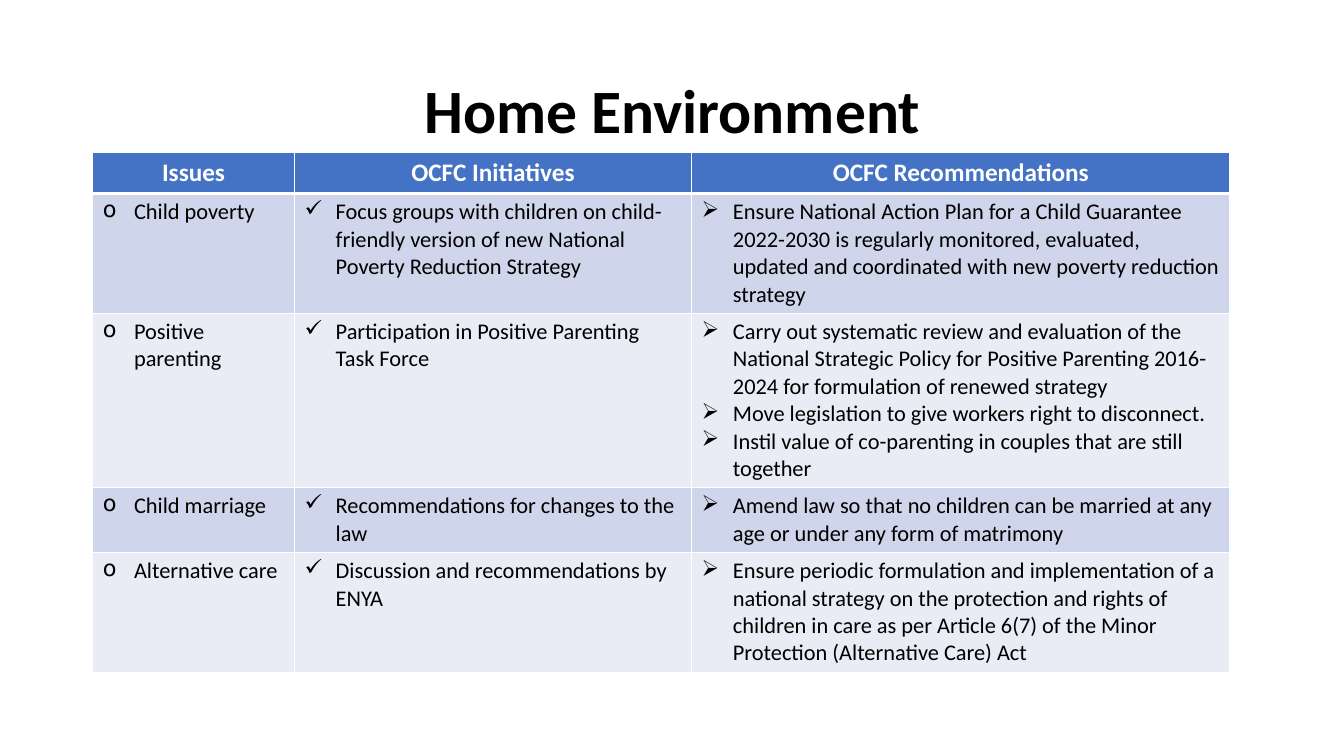
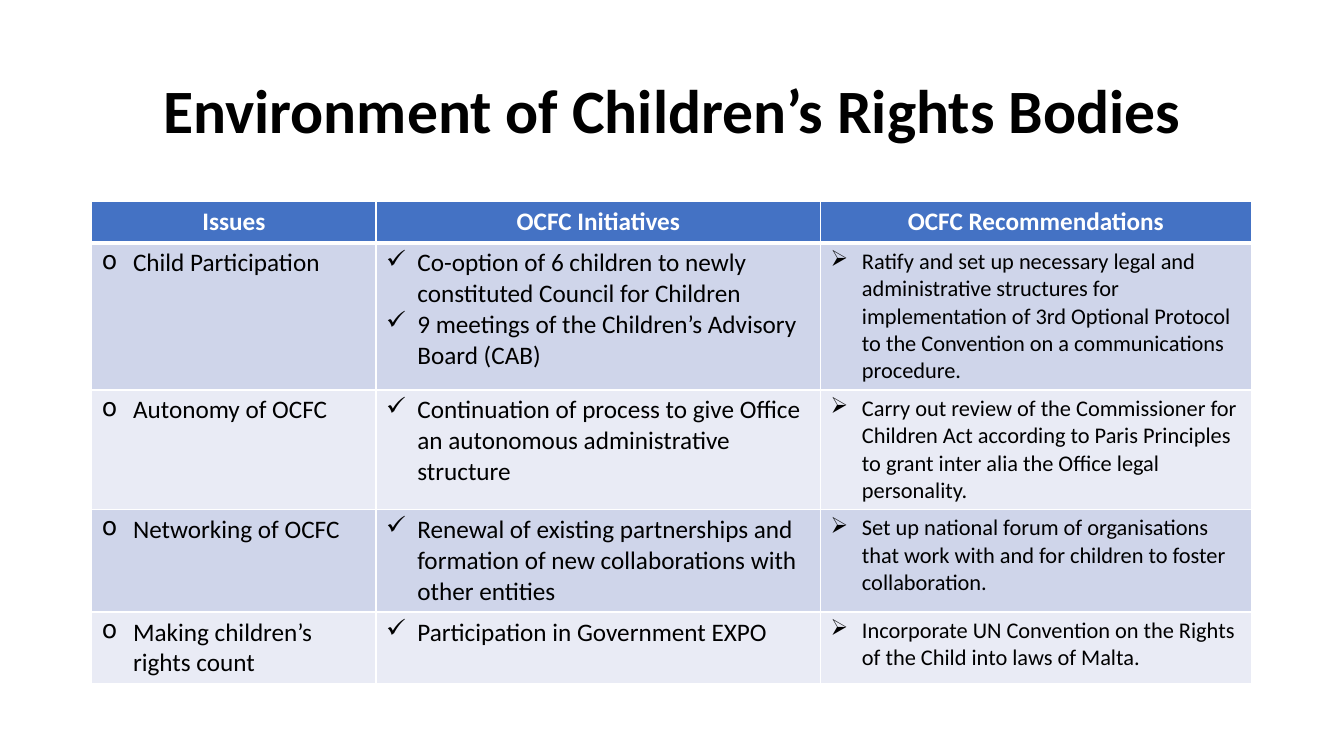
from lxml import etree
from pptx import Presentation, util as u
from pptx.dml.color import RGBColor
from pptx.enum import text
from pptx.oxml.ns import qn

# Shared look
FONT = "Calibri"
BLACK, WHITE = "000000", "FFFFFF"
HEADER_FILL = "4472C4"
BAND_FILLS = ("CFD5EA", "E9EBF5")
TITLE_BOX = (0.92, 0.4, 11.5, 1.45)
HEADINGS = ("Issues", "OCFC Initiatives", "OCFC Recommendations")
BULLETS = ("o", "✓", "➢")
HANG = u.Inches(0.31)
THIN, THICK = 1, 3
HEADER_HEIGHT = 0.41

# Each row: height, then the paragraphs of its three cells
HOME_ROWS = [
    (1.18, ["Child poverty"],
     ["Focus groups with children on child-friendly version of new National "
      "Poverty Reduction Strategy"],
     ["Ensure National Action Plan for a Child Guarantee 2022-2030 is regularly "
      "monitored, evaluated, updated and coordinated with new poverty reduction "
      "strategy"]),
    (1.72, ["Positive parenting"],
     ["Participation in Positive Parenting Task Force"],
     ["Carry out systematic review and evaluation of the National Strategic Policy "
      "for Positive Parenting 2016-2024 for formulation of renewed strategy",
      "Move legislation to give workers right to disconnect.",
      "Instil value of co-parenting in couples that are still together"]),
    (0.64, ["Child marriage"],
     ["Recommendations for changes to the law"],
     ["Amend law so that no children can be married at any age or under any form "
      "of matrimony"]),
    (1.18, ["Alternative care"],
     ["Discussion and recommendations by ENYA"],
     ["Ensure periodic formulation and implementation of a national strategy on the "
      "protection and rights of children in care as per Article 6(7) of the Minor "
      "Protection (Alternative Care) Act"]),
]
RIGHTS_ROWS = [
    (1.45, ["Child Participation"],
     ["Co-option of 6 children to newly constituted Council for Children",
      "9 meetings of the Children’s Advisory Board (CAB)"],
     ["Ratify and set up necessary legal and administrative structures for "
      "implementation of 3rd Optional Protocol to the Convention on a "
      "communications procedure."]),
    (1.18, ["Autonomy of OCFC"],
     ["Continuation of process to give Office an autonomous administrative structure"],
     ["Carry out review of the Commissioner for Children Act according to Paris "
      "Principles to grant inter alia the Office legal personality."]),
    (1.01, ["Networking of OCFC"],
     ["Renewal of existing partnerships and formation of new collaborations with "
      "other entities"],
     ["Set up national forum of organisations that work with and for children to "
      "foster collaboration."]),
    (0.71, ["Making children’s rights count"],
     ["Participation in Government EXPO"],
     ["Incorporate UN Convention on the Rights of the Child into laws of Malta."]),
]


def rgb(value):
    return RGBColor.from_string(value)


def add_run(paragraph, words, size, color, bold=False):
    run = paragraph.add_run()
    run.text = words
    run.font.name = FONT
    run.font.size = u.Pt(size)
    run.font.bold = bold
    run.font.color.rgb = rgb(color)


def add_bullet(paragraph, mark):
    properties = paragraph._p.get_or_add_pPr()
    properties.set("marL", str(HANG))
    properties.set("indent", str(-HANG))
    etree.SubElement(properties, qn("a:buChar"), char=mark)


def style_cell(cell, fill, top=THIN, bottom=THIN):
    """White borders first, then the fill, as the schema orders them."""
    properties = cell._tc.get_or_add_tcPr()
    for side, width in (("L", THIN), ("R", THIN), ("T", top), ("B", bottom)):
        line = etree.SubElement(properties, qn(f"a:ln{side}"), w=str(u.Pt(width)))
        solid = etree.SubElement(line, qn("a:solidFill"))
        etree.SubElement(solid, qn("a:srgbClr"), val=WHITE)
    cell.fill.solid()
    cell.fill.fore_color.rgb = rgb(fill)


def fill_list(cell, items, mark, size):
    frame = cell.text_frame
    for i, item in enumerate(items):
        paragraph = frame.add_paragraph() if i else frame.paragraphs[0]
        add_bullet(paragraph, mark)
        add_run(paragraph, item, size, BLACK)


def add_title(slide, words):
    title = slide.shapes.title
    title.left, title.top, title.width, title.height = map(u.Inches, TITLE_BOX)
    title.text_frame.vertical_anchor = text.MSO_ANCHOR.MIDDLE
    paragraph = title.text_frame.paragraphs[0]
    paragraph.alignment = text.PP_ALIGN.CENTER
    paragraph.line_spacing = 0.9
    add_run(paragraph, words, 44, BLACK, bold=True)


def add_issue_table(slide, left, top, widths, rows, sizes):
    heights = [HEADER_HEIGHT] + [row[0] for row in rows]
    box = map(u.Inches, (left, top, sum(widths), sum(heights)))
    table = slide.shapes.add_table(len(heights), len(widths), *box).table
    for column, width in zip(table.columns, widths):
        column.width = u.Inches(width)
    for row, height in zip(table.rows, heights):
        row.height = u.Inches(height)

    # Header row
    for c, heading in enumerate(HEADINGS):
        cell = table.cell(0, c)
        style_cell(cell, HEADER_FILL, bottom=THICK)
        paragraph = cell.text_frame.paragraphs[0]
        paragraph.alignment = text.PP_ALIGN.CENTER
        add_run(paragraph, heading, 18, WHITE, bold=True)

    # Banded body rows
    for r, (_, *lists) in enumerate(rows):
        for c, items in enumerate(lists):
            cell = table.cell(r + 1, c)
            style_cell(cell, BAND_FILLS[r % 2], top=THIN if r else THICK)
            fill_list(cell, items, BULLETS[c], sizes[c])


def main():
    deck = Presentation()
    deck.slide_width, deck.slide_height = u.Inches(13.33), u.Inches(7.5)
    title_only = deck.slide_layouts[5]

    # Home environment
    home = deck.slides.add_slide(title_only)
    add_title(home, "Home Environment")
    add_issue_table(home, 0.92, 1.51, (2, 3.94, 5.34), HOME_ROWS, (16, 16, 16))

    # Children's rights bodies
    rights = deck.slides.add_slide(title_only)
    add_title(rights, "Environment of Children’s Rights Bodies")
    add_issue_table(rights, 0.91, 2, (2.82, 4.41, 4.27), RIGHTS_ROWS, (18, 18, 16))

    deck.save("out.pptx")


if __name__ == "__main__":
    main()
